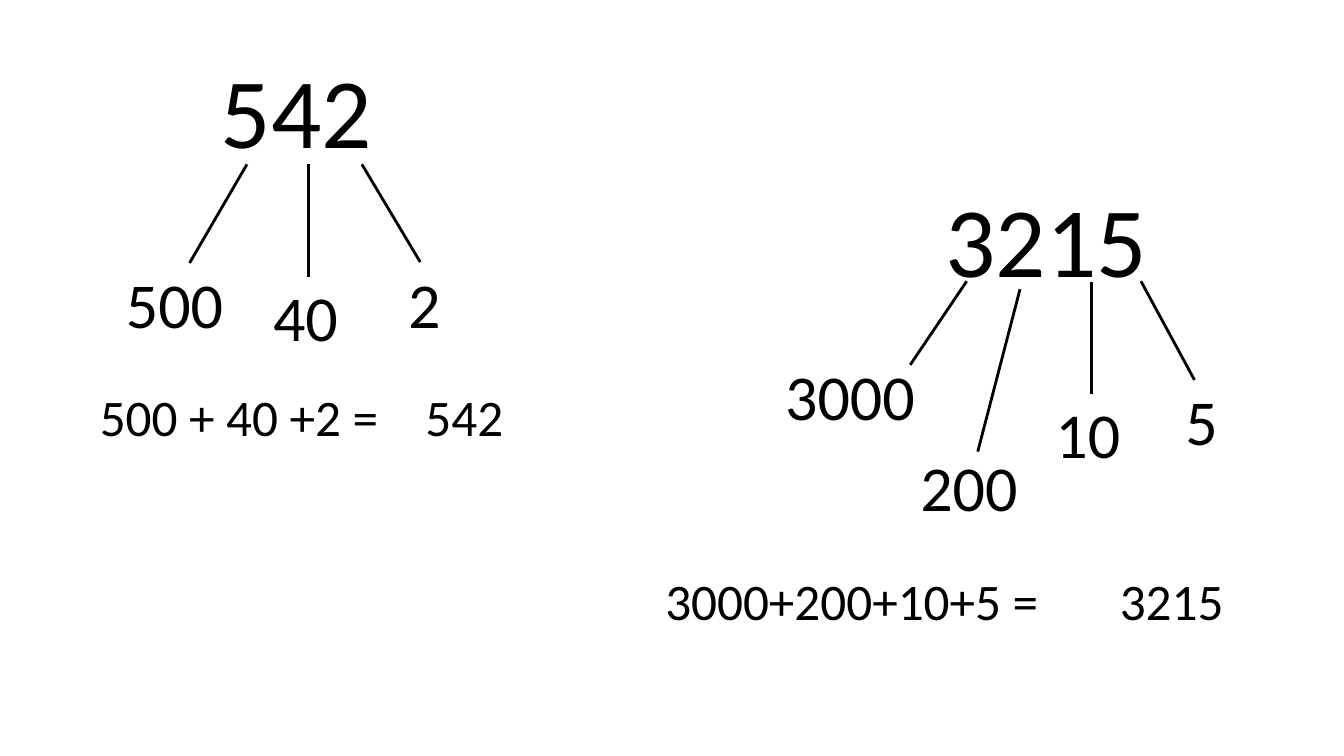
"""Build a slide that splits two numbers into their place values."""
from dataclasses import dataclass

from lxml import etree
from pptx import Presentation
from pptx import util as u
from pptx.dml.color import RGBColor
from pptx.enum import shapes, text
from pptx.oxml import ns
from pptx.slide import Slide

INK = RGBColor(0x00, 0x00, 0x00)
PAPER = RGBColor(0xFF, 0xFF, 0xFF)
FONT = "Calibri"
INSET = 2.9
BRANCH_WIDTH = 2


@dataclass(frozen=True)
class Level:
    size: float
    height: float


NUMBER = Level(71, 91.4)
ADDEND = Level(45.7, 61.2)
SUM = Level(36.6, 49.7)


@dataclass(frozen=True)
class Label:
    wording: str
    left: float
    top: float
    width: float


@dataclass(frozen=True)
class Branch:
    addend: Label
    start: tuple[float, float]
    end: tuple[float, float]


@dataclass(frozen=True)
class Expansion:
    number: Label
    branches: tuple[Branch, ...]
    addition: Label
    total: Label


EXPANSIONS = (
    Expansion(
        Label("542", 154.8, 31.7, 114.5),
        (
            Branch(Label("500", 87.1, 185.8, 75.6), (135.4, 187.9), (176.4, 117.4)),
            Branch(Label("40", 192.2, 195.1, 52.6), (220.3, 198), (220.3, 117.4)),
            Branch(Label("2", 288.7, 185.8, 28.8), (300.2, 187.2), (258.5, 117.4)),
        ),
        Label("500 + 40 +2 =", 68.4, 272.2, 206.6),
        Label("542", 301, 272.2, 61.9),
    ),
    Expansion(
        Label("3215", 672.5, 123.8, 151.2),
        (
            Branch(Label("3000", 558, 251.3, 99.4), (650.2, 260.6), (690.5, 200.9)),
            Branch(Label("200", 654.5, 316.8, 75.6), (698.4, 322.6), (728.6, 206.6)),
            Branch(Label("10", 751, 278.6, 52.6), (779.8, 281.5), (779.8, 201.6)),
            Branch(Label("5", 843.8, 269.3, 28.8), (853.2, 271.4), (815, 200.9)),
        ),
        Label("3000+200+10+5 =", 472.3, 403.9, 274.3),
        Label("3215", 797, 403.9, 80.6),
    ),
)


def draw_label(slide: Slide, label: Label, level: Level) -> None:
    bounds = (label.left, label.top, label.width, level.height)
    frame = slide.shapes.add_textbox(*map(u.Pt, bounds)).text_frame
    frame.word_wrap = False
    frame.auto_size = text.MSO_AUTO_SIZE.SHAPE_TO_FIT_TEXT
    frame.vertical_anchor = text.MSO_ANCHOR.MIDDLE
    frame.margin_left = frame.margin_right = u.Pt(INSET)
    frame.margin_top = frame.margin_bottom = u.Pt(INSET)
    wording = frame.paragraphs[0]
    wording.text = label.wording
    wording.font.name = FONT
    wording.font.size = u.Pt(level.size)
    wording.font.color.rgb = INK


def draw_branch(slide: Slide, branch: Branch) -> None:
    ends = map(u.Pt, branch.start + branch.end)
    stroke = slide.shapes.add_connector(shapes.MSO_CONNECTOR.STRAIGHT, *ends)
    stroke.line.color.rgb = INK
    stroke.line.width = u.Pt(BRANCH_WIDTH)
    etree.SubElement(stroke._element.spPr, ns.qn("a:effectLst"))
    draw_label(slide, branch.addend, ADDEND)


def draw_expansion(slide: Slide, expansion: Expansion) -> None:
    draw_label(slide, expansion.number, NUMBER)
    for branch in expansion.branches:
        draw_branch(slide, branch)
    draw_label(slide, expansion.addition, SUM)
    draw_label(slide, expansion.total, SUM)


def main() -> None:
    deck = Presentation()
    deck.slide_width, deck.slide_height = u.Pt(960), u.Pt(540)
    slide = deck.slides.add_slide(deck.slide_layouts.get_by_name("Blank"))
    slide.background.fill.solid()
    slide.background.fill.fore_color.rgb = PAPER
    for expansion in EXPANSIONS:
        draw_expansion(slide, expansion)
    deck.save("out.pptx")


if __name__ == "__main__":
    main()
